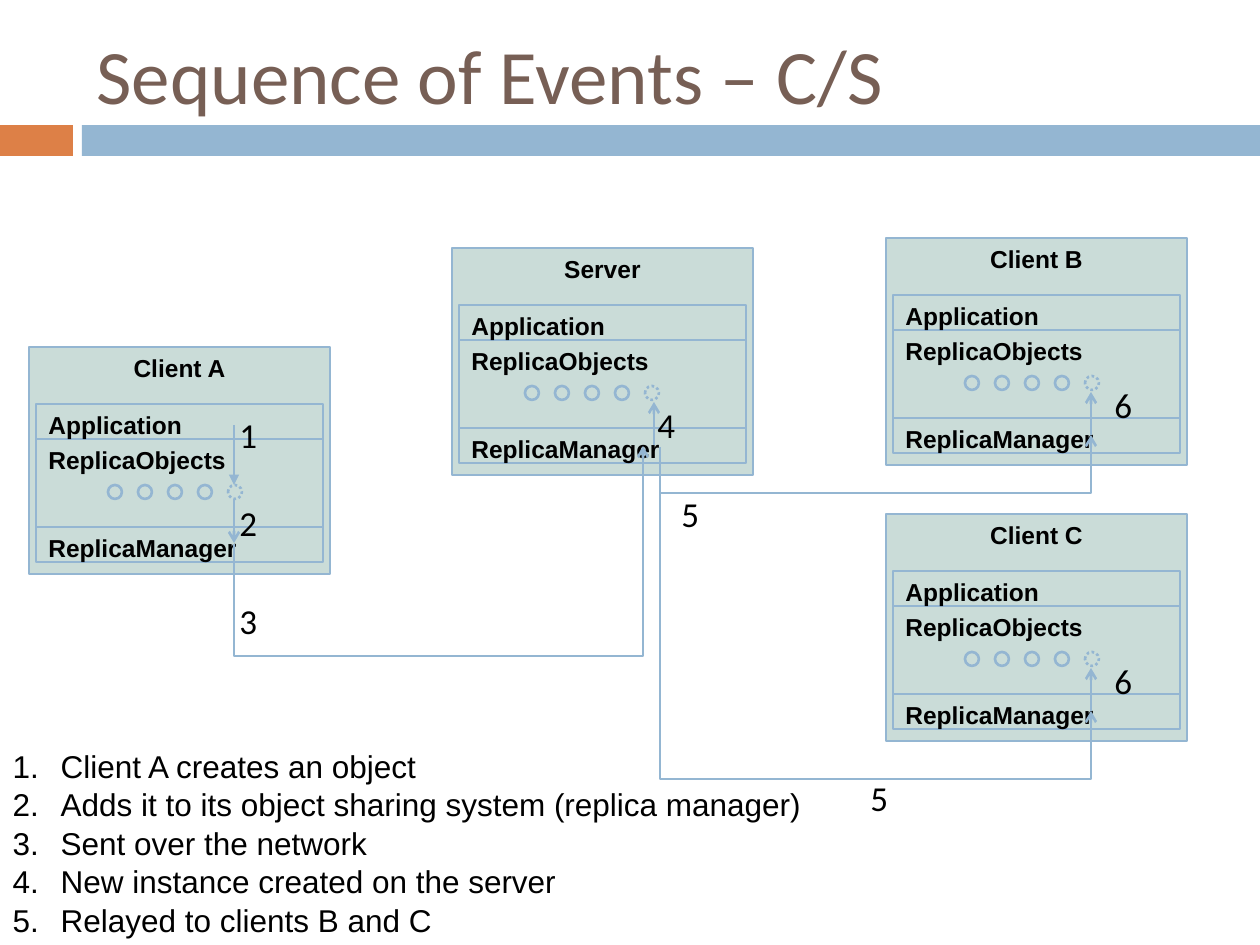
"""Build the client/server sequence-of-events slide."""
from lxml import etree
from pptx import Presentation
from pptx.dml.color import RGBColor
from pptx.enum.dml import MSO_LINE
from pptx.enum.shapes import MSO_CONNECTOR, MSO_SHAPE
from pptx.enum.text import MSO_ANCHOR, MSO_AUTO_SIZE, PP_ALIGN
from pptx.oxml.ns import qn
from pptx.util import Emu, Pt

RECT, OVAL = MSO_SHAPE.RECTANGLE, MSO_SHAPE.OVAL
STRAIGHT = MSO_CONNECTOR.STRAIGHT
DOTTED = MSO_LINE.ROUND_DOT
TOP, MIDDLE = MSO_ANCHOR.TOP, MSO_ANCHOR.MIDDLE
LEFT, CENTER = PP_ALIGN.LEFT, PP_ALIGN.CENTER
NO_FIT = MSO_AUTO_SIZE.NONE
SCALE = 914400 / 126
COLORS = {"orange": "DD8047", "blue": "94B6D2", "panel": "CADCD8",
          "title": "775F55", "text": "000000"}


def px(n):
    return Emu(round(n * SCALE))


def rgb(name):
    return RGBColor.from_string(COLORS[name])


class Deck:
    """Hold the style and the current slide."""

    def __init__(self, prs):
        self.s = prs.slides.add_slide(prs.slide_layouts[1])
        self.line_width = Pt(1.5)

    def run(self, p, text, size, font="Arial", color="text", bold=False):
        r = p.add_run()
        r.text = text
        r.font.size, r.font.name, r.font.bold = Pt(size), font, bold
        r.font.color.rgb = rgb(color)

    def place(self, sp, x, y, w, h, anchor):
        sp.left, sp.top, sp.width, sp.height = map(px, (x, y, w, h))
        tf = sp.text_frame
        tf.word_wrap, tf.auto_size, tf.vertical_anchor = True, NO_FIT, anchor
        return tf

    def title(self, text, *box):
        tf = self.place(self.s.shapes.title, *box, MIDDLE)
        p = tf.paragraphs[0]
        p.alignment = LEFT
        self.run(p, text, 44, "Calibri", "title")

    def steps(self, items, *box):
        tf = self.place(self.s.placeholders[1], *box, TOP)
        for i, item in enumerate(items):
            p = tf.add_paragraph() if i else tf.paragraphs[0]
            p.line_spacing, p.space_before = Pt(22), Pt(0)
            pPr = p._p.get_or_add_pPr()
            pPr.set("marL", str(px(48)))
            pPr.set("indent", str(px(-48)))
            etree.SubElement(pPr, qn("a:buFont"), typeface="+mj-lt")
            etree.SubElement(pPr, qn("a:buAutoNum"), type="arabicPeriod")
            self.run(p, item, 18)

    def bar(self, color, x, w):
        sp = self.s.shapes.add_shape(RECT, px(x), px(125), px(w), px(31))
        sp.shadow.inherit = False
        sp.fill.solid()
        sp.fill.fore_color.rgb = rgb(color)
        sp.line.fill.background()

    def panel(self, kind, x, y, w, h, text="", align=LEFT):
        sp = self.s.shapes.add_shape(kind, px(x), px(y), px(w), px(h))
        sp.shadow.inherit = False
        sp.fill.solid()
        sp.fill.fore_color.rgb = rgb("panel")
        self.outline(sp)
        if text:
            tf = self.place(sp, x, y, w, h, TOP)
            tf.paragraphs[0].alignment = align
            self.run(tf.paragraphs[0], text, 14, bold=True)
        return sp

    def host(self, name, x, y, dots):
        self.panel(RECT, x, y, 301, 227, name, CENTER)
        self.panel(RECT, x + 7, y + 92, 287, 96, "ReplicaObjects")
        for i in range(5):
            sp = self.panel(OVAL, x + dots + 30 * i, y + 138, 14, 14)
        sp.line.dash_style = DOTTED
        self.panel(RECT, x + 7, y + 57, 287, 35, "Application")
        self.panel(RECT, x + 7, y + 180, 287, 35, "ReplicaManager")

    def outline(self, sp, end=None):
        sp.line.color.rgb = rgb("blue")
        sp.line.width = self.line_width
        if end:
            etree.SubElement(sp.line._ln, qn("a:tailEnd"), type=end)

    def arrow(self, x, y1, y2, end="arrow"):
        c = self.s.shapes.add_connector(STRAIGHT, px(x), px(y1), px(x), px(y2))
        self.outline(c, end)
        etree.SubElement(c._element.spPr, qn("a:effectLst"))

    def route(self, *points):
        start, *rest = points
        fb = self.s.shapes.build_freeform(*start, scale=SCALE)
        fb.add_line_segments(rest, close=False)
        sp = fb.convert_to_shape()
        sp.shadow.inherit = False
        sp.fill.background()
        self.outline(sp, "arrow")

    def label(self, text, x, y):
        box = (x, y, 29, 97)
        tf = self.place(self.s.shapes.add_textbox(*map(px, box)), *box, TOP)
        self.run(tf.paragraphs[0], text, 20, "Calibri")


def main():
    prs = Presentation()
    prs.slide_width, prs.slide_height = px(1260), px(945)
    d = Deck(prs)
    d.bar("orange", 0, 73)
    d.bar("blue", 82, 1178)
    d.title("Sequence of Events – C/S", 84, 32, 1124, 84)

    for name, x, y, dots in (("Client A", 29, 347, 79), ("Server", 452, 248, 73),
                             ("Client C", 886, 514, 79), ("Client B", 886, 238, 79)):
        d.host(name, x, y, dots)

    d.arrow(234, 425, 485, "triangle")
    d.arrow(234, 500, 543)
    for x, y in ((654, 248), (1091, 514), (1091, 238)):
        d.arrow(x, y + 197, y + 154)

    d.route((234, 544), (234, 656), (643, 656), (643, 446))
    d.route((660, 447), (660, 493), (1091, 493), (1091, 435))
    d.route((660, 493), (660, 779), (1091, 779), (1091, 711))

    for text, x, y in (("1", 227, 407), ("2", 227, 495), ("3", 227, 593),
                       ("4", 645, 397), ("5", 669, 486), ("5", 858, 770),
                       ("6", 1102, 653), ("6", 1102, 377)):
        d.label(text, x, y)

    d.steps(["Client A creates an object",
             "Adds it to its object sharing system (replica manager)",
             "Sent over the network",
             "New instance created on the server",
             "Relayed to clients B and C"], 0, 740, 848, 204)
    prs.save("out.pptx")


if __name__ == "__main__":
    main()
